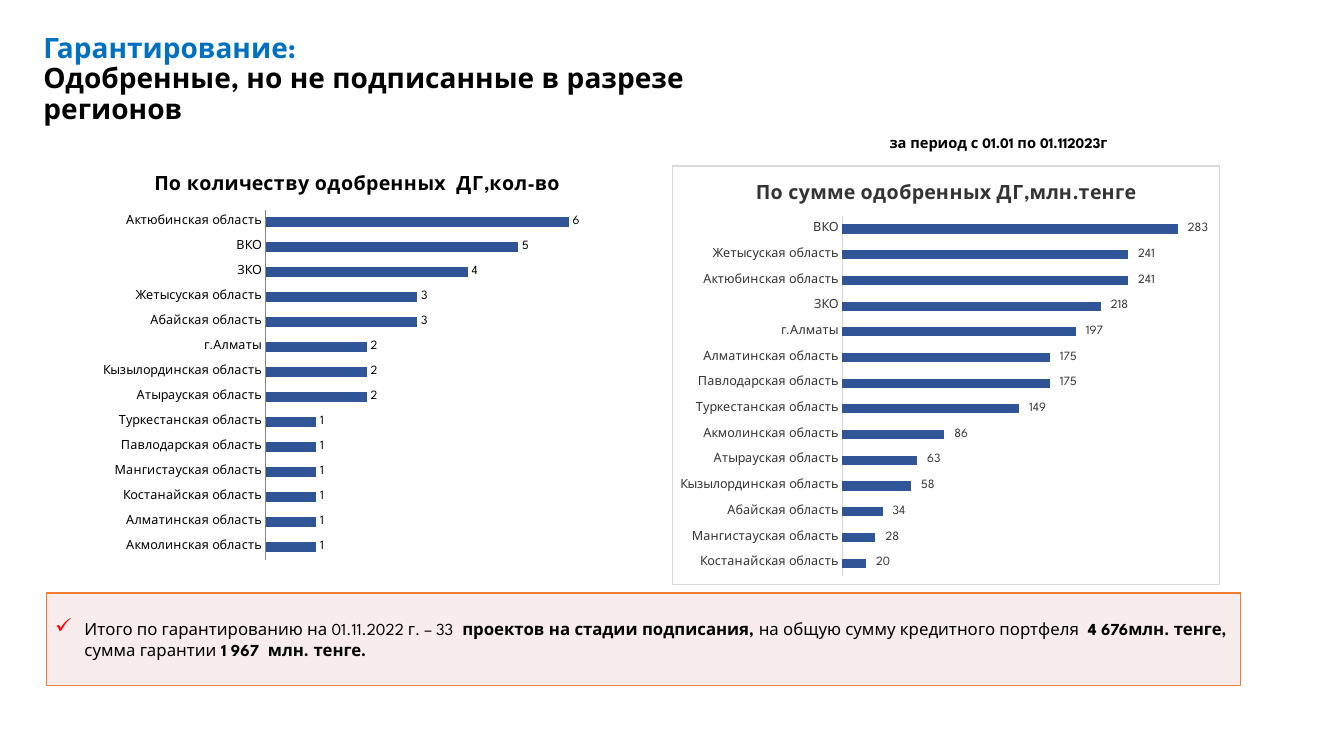
from dataclasses import dataclass

from lxml import etree
from pptx import Presentation
from pptx.chart.data import CategoryChartData
from pptx.dml.color import RGBColor
from pptx.enum.chart import XL_CHART_TYPE, XL_LABEL_POSITION, XL_TICK_MARK
from pptx.enum.text import MSO_ANCHOR, MSO_AUTO_SIZE, PP_ALIGN
from pptx.oxml import parse_xml
from pptx.oxml.ns import nsdecls, qn
from pptx.util import Cm, Pt

BAR_CLUSTERED = XL_CHART_TYPE.BAR_CLUSTERED
OUTSIDE_END = XL_LABEL_POSITION.OUTSIDE_END
NO_TICK = XL_TICK_MARK.NONE
TOP, MIDDLE = MSO_ANCHOR.TOP, MSO_ANCHOR.MIDDLE
NO_AUTOFIT = MSO_AUTO_SIZE.NONE
LEFT = PP_ALIGN.LEFT


@dataclass(frozen=True)
class Theme:
    font: str = "League Spartan"
    chart_font: str = "Calibri"
    accent: str = "0070C0"
    black: str = "000000"
    dark_grey: str = "333333"
    axis_grey: str = "868686"
    light_grey: str = "D9D9D9"
    white: str = "FFFFFF"
    bar: str = "2F5597"
    summary_fill: str = "F2DCDB"
    summary_line: str = "ED7D31"
    check: str = "FF0000"
    title_size: float = 20
    chart_title_size: float = 14
    summary_size: float = 12
    period_size: float = 10.5
    chart_size: float = 10
    label_size: float = 9


THEME = Theme()

AMOUNT_FORMAT = r'_-* #\ ##0_р_._-;\-* #\ ##0_р_._-;_-* "-"'

COUNT_BY_REGION = {
    "Акмолинская область": 1, "Алматинская область": 1,
    "Костанайская область": 1, "Мангистауская область": 1,
    "Павлодарская область": 1, "Туркестанская область": 1,
    "Атырауская область": 2, "Кызылординская область": 2,
    "г.Алматы": 2, "Абайская область": 3, "Жетысуская область": 3,
    "ЗКО": 4, "ВКО": 5, "Актюбинская область": 6,
}
AMOUNT_BY_REGION = {
    "Костанайская область": 20, "Мангистауская область": 28,
    "Абайская область": 34, "Кызылординская область": 58,
    "Атырауская область": 63, "Акмолинская область": 86,
    "Туркестанская область": 149, "Павлодарская область": 175,
    "Алматинская область": 175, "г.Алматы": 197, "ЗКО": 218,
    "Актюбинская область": 241, "Жетысуская область": 241, "ВКО": 283,
}
# Text and whether it is bold
SUMMARY = [
    ("Итого по гарантированию на 01.11.2022 г. – 33 ", False),
    (" проектов на стадии подписания, ", True),
    ("на общую сумму кредитного портфеля  ", False),
    ("4 676млн. тенге, ", True),
    ("сумма гарантии", False),
    (" 1 967  млн. тенге.", True),
]


def rgb(color):
    return RGBColor.from_string(color)


def style_font(font, size, color, bold=False, name=THEME.font):
    font.name, font.size, font.bold = name, Pt(size), bold
    font.color.rgb = rgb(color)


def place_title(slide):
    title = slide.shapes.title
    title.left, title.top = Cm(0.84), Cm(0.74)
    title.width, title.height = Cm(19.99), Cm(2.82)
    frame = title.text_frame
    frame.text = "Гарантирование: \vОдобренные, но не подписанные в разрезе регионов"
    frame.word_wrap, frame.auto_size = True, NO_AUTOFIT
    frame.vertical_anchor = TOP
    heading = frame.paragraphs[0]
    heading.alignment, heading.line_spacing = LEFT, 0.9
    for run, color in zip(heading.runs, (THEME.accent, THEME.black)):
        style_font(run.font, THEME.title_size, color, True)


def add_period(slide):
    period = slide.shapes.add_textbox(Cm(22.17), Cm(3.25), Cm(6.65), Cm(0.71))
    frame = period.text_frame
    frame.text = "за период с 01.01 по 01.112023г"
    frame.word_wrap = False
    style_font(frame.paragraphs[0].runs[0].font, THEME.period_size, THEME.black, True)


def set_plot_area(chart, x, y, w, h):
    plot_area = chart.element.find(".//" + qn("c:plotArea"))
    for old in plot_area.findall(qn("c:layout")):
        plot_area.remove(old)
    plot_area.insert(0, parse_xml(
        f'<c:layout {nsdecls("c")}><c:manualLayout><c:layoutTarget val="inner"/>'
        f'<c:xMode val="edge"/><c:yMode val="edge"/><c:x val="{x}"/><c:y val="{y}"/>'
        f'<c:w val="{w}"/><c:h val="{h}"/></c:manualLayout></c:layout>'))


def add_frame(chart):
    chart_text = chart.element.find(qn("c:txPr"))
    chart_text.addprevious(parse_xml(
        f'<c:spPr {nsdecls("c", "a")}>'
        f'<a:solidFill><a:srgbClr val="{THEME.white}"/></a:solidFill>'
        f'<a:ln w="{Pt(0.75)}"><a:solidFill><a:srgbClr val="{THEME.light_grey}"/>'
        '</a:solidFill></a:ln></c:spPr>'))


def add_region_chart(slide, box, title, values, plot_box, maximum, gap,
                     text_color, axis_color, number_format):
    data = CategoryChartData()
    data.categories = list(values)
    data.add_series("Series 1", list(values.values()))
    chart = slide.shapes.add_chart(BAR_CLUSTERED, *map(Cm, box), data).chart
    style_font(chart.font, THEME.chart_size, THEME.black, name=THEME.chart_font)
    chart.has_legend = False
    set_plot_area(chart, *plot_box)

    # Heading
    chart.has_title = True
    chart.chart_title.include_in_layout = False
    heading = chart.chart_title.text_frame
    heading.text = title
    style_font(heading.paragraphs[0].runs[0].font, THEME.chart_title_size, text_color, True)

    # Axes
    regions, scale = chart.category_axis, chart.value_axis
    regions.major_tick_mark = regions.minor_tick_mark = NO_TICK
    regions.format.line.color.rgb = rgb(axis_color)
    regions.format.line.width = Pt(0.75)
    style_font(regions.tick_labels.font, THEME.label_size, text_color)
    scale.visible = scale.has_major_gridlines = False
    scale.minimum_scale, scale.maximum_scale = 0, maximum

    # Bars and their values
    plot = chart.plots[0]
    plot.gap_width, plot.vary_by_categories = gap, False
    bars = plot.series[0]
    bars.format.fill.solid()
    bars.format.fill.fore_color.rgb = rgb(THEME.bar)
    labels = bars.data_labels
    labels.show_value, labels.position = True, OUTSIDE_END
    labels.number_format, labels.number_format_is_linked = number_format, False
    style_font(labels.font, THEME.label_size, text_color)
    return chart


def add_check_bullet(paragraph):
    props = paragraph._p.get_or_add_pPr()
    props.set("marL", str(Cm(0.76)))
    props.set("indent", str(Cm(-0.74)))
    color = etree.SubElement(props, qn("a:buClr"))
    etree.SubElement(color, qn("a:srgbClr"), val=THEME.check)
    etree.SubElement(props, qn("a:buSzPct"), val="125000")
    etree.SubElement(props, qn("a:buChar"), char="✓")


def add_summary(slide):
    summary = slide.shapes.add_shape(1, Cm(1.17), Cm(14.94), Cm(30.1), Cm(2.34))
    summary.shadow.inherit = False
    summary.fill.solid()
    summary.fill.fore_color.rgb = rgb(THEME.summary_fill)
    fill_color = summary.fill._xPr.find(".//" + qn("a:srgbClr"))
    etree.SubElement(fill_color, qn("a:alpha"), val="50000")
    summary.line.color.rgb = rgb(THEME.summary_line)
    summary.line.width = Pt(1)
    frame = summary.text_frame
    frame.word_wrap, frame.vertical_anchor = True, MIDDLE
    frame.margin_left = frame.margin_right = Cm(0.2)
    frame.margin_top = frame.margin_bottom = Cm(0.1)
    totals = frame.paragraphs[0]
    totals.alignment, totals.space_after = LEFT, Pt(6)
    add_check_bullet(totals)
    for text, bold in SUMMARY:
        run = totals.add_run()
        run.text = text
        style_font(run.font, THEME.summary_size, THEME.black, bold)


def main():
    deck = Presentation()
    deck.slide_width, deck.slide_height = Cm(33.87), Cm(19.05)
    slide = deck.slides.add_slide(deck.slide_layouts[5])
    place_title(slide)
    add_period(slide)
    add_summary(slide)
    add_region_chart(slide, (1.78, 3.96, 14.45, 10.57), "По количеству одобренных  ДГ,кол-во",
                     COUNT_BY_REGION, (0.34, 0.125, 0.617, 0.835), 7, 150,
                     THEME.black, THEME.axis_grey, "General")
    amounts = add_region_chart(slide, (16.94, 4.17, 13.82, 10.57), "По сумме одобренных ДГ,млн.тенге",
                               AMOUNT_BY_REGION, (0.31, 0.12, 0.65, 0.86), 300, 182,
                               THEME.dark_grey, THEME.light_grey, AMOUNT_FORMAT)
    add_frame(amounts)
    deck.save("out.pptx")


if __name__ == "__main__":
    main()
